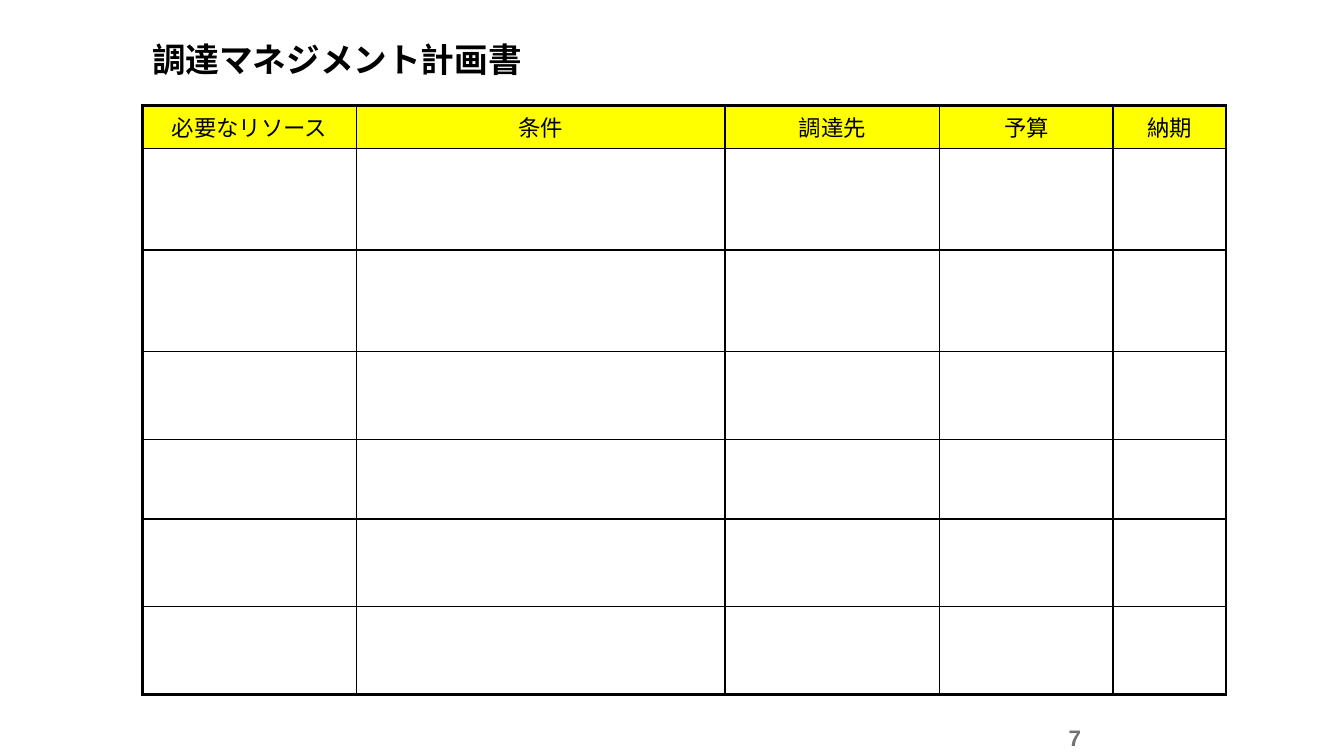
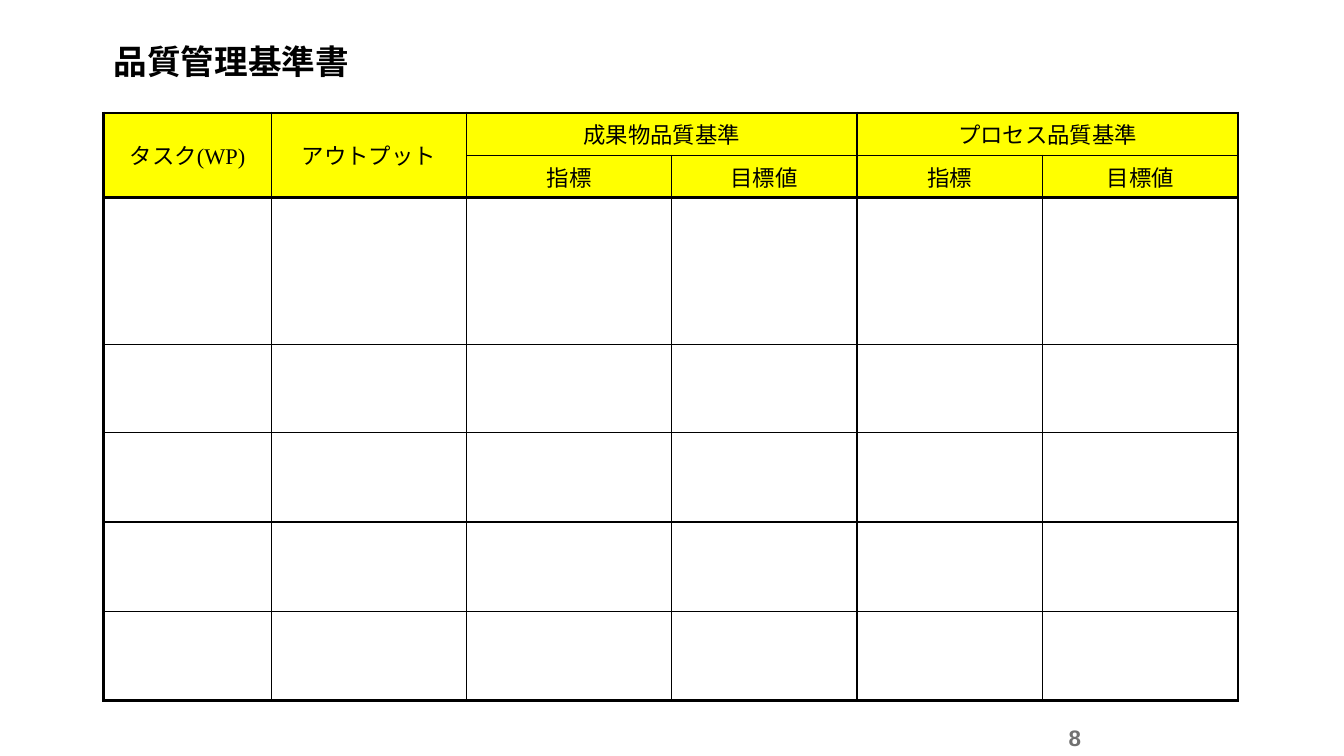
import lxml.etree
import pptx
import pptx.dml.color
import pptx.enum.text
import pptx.oxml.ns
import pptx.util

PX = 9144
COLORS = {"ink": "000000", "header": "FFFF00", "number": "717171"}
GOTHIC = "Noto Sans CJK JP"
ALIGN = pptx.enum.text.PP_ALIGN
ANCHOR = pptx.enum.text.MSO_ANCHOR
THIN, THICK = 1, 2.25

PAGES = [
    {
        "number": "7",
        "title": "調達マネジメント計画書",
        "title_box": (141, 28, 791, 67),
        "table_at": (141, 105),
        "cols": [213, 365, 213, 172, 112],
        "rows": [42, 101, 101, 87, 79, 87, 87],
        "header": [["必要なリソース", "条件", "調達先", "予算", "納期"]],
        "merges": [],
        "thick_rows": {0, 7},
        "font": GOTHIC,
        "anchor": ANCHOR.TOP,
    },
    {
        "number": "8",
        "title": "品質管理基準書",
        "title_box": (103, 26, 776, 75),
        "table_at": (103, 112),
        "cols": [166, 194, 203, 184, 184, 194],
        "rows": [42, 42, 146, 87, 89, 89, 88],
        "header": [
            ["タスク(WP)", "アウトプット", "成果物品質基準", "", "プロセス品質基準", ""],
            ["", "", "指標", "目標値", "指標", "目標値"],
        ],
        "merges": [(0, 0, 1, 0), (0, 1, 1, 1), (0, 2, 0, 3), (0, 4, 0, 5)],
        "thick_rows": {0, 2, 7},
        "font": "Times New Roman",
        "anchor": ANCHOR.MIDDLE,
    },
]


def write(tf, text, size, font, color, align, bold=False):
    p = tf.paragraphs[0]
    p.text = text
    p.alignment = align
    p.font.size = pptx.util.Pt(size)
    p.font.bold = bold
    p.font.color.rgb = pptx.dml.color.RGBColor.from_string(COLORS[color])
    p.font.name = font
    rpr = p.font._element if hasattr(p.font, "_element") else p._p.pPr.find(pptx.oxml.ns.qn("a:defRPr"))
    ea = lxml.etree.SubElement(rpr, pptx.oxml.ns.qn("a:ea"))
    ea.set("typeface", GOTHIC)
    return p


def border(cell, side, width):
    tc_pr = cell._tc.get_or_add_tcPr()
    ln = lxml.etree.SubElement(tc_pr, pptx.oxml.ns.qn("a:ln" + side))
    ln.set("w", str(pptx.util.Pt(width)))
    fill = lxml.etree.SubElement(ln, pptx.oxml.ns.qn("a:solidFill"))
    lxml.etree.SubElement(fill, pptx.oxml.ns.qn("a:srgbClr")).set("val", COLORS["ink"])


prs = pptx.Presentation()
prs.slide_width = 1333 * PX
prs.slide_height = 750 * PX

for page in PAGES:
    s = prs.slides.add_slide(prs.slide_layouts[6])

    tf = s.shapes.add_textbox(*(v * PX for v in page["title_box"])).text_frame
    tf.word_wrap = True
    tf.vertical_anchor = ANCHOR.MIDDLE
    p = write(tf, page["title"], 24, GOTHIC, "ink", ALIGN.LEFT, bold=True)
    p.line_spacing = 0.9

    cols, rows = page["cols"], page["rows"]
    left, top = page["table_at"]
    table = s.shapes.add_table(
        len(rows), len(cols), left * PX, top * PX, sum(cols) * PX, sum(rows) * PX
    ).table
    table.first_row = False
    table.horz_banding = False
    for col, width in zip(table.columns, cols):
        col.width = width * PX
    for row, height in zip(table.rows, rows):
        row.height = height * PX
    for r1, c1, r2, c2 in page["merges"]:
        table.cell(r1, c1).merge(table.cell(r2, c2))

    thick_rows, thick_cols = page["thick_rows"], {0, len(cols)}
    for r in range(len(rows)):
        for c in range(len(cols)):
            cell = table.cell(r, c)
            right, bottom = c + cell.span_width, r + cell.span_height
            border(cell, "L", THICK if c in thick_cols else THIN)
            border(cell, "R", THICK if right in thick_cols else THIN)
            border(cell, "T", THICK if r in thick_rows else THIN)
            border(cell, "B", THICK if bottom in thick_rows else THIN)
            if r >= len(page["header"]):
                cell.fill.background()
                continue
            cell.fill.solid()
            cell.fill.fore_color.rgb = pptx.dml.color.RGBColor.from_string(COLORS["header"])
            cell.vertical_anchor = page["anchor"]
            if not cell.is_spanned:
                write(cell.text_frame, page["header"][r][c], 16, page["font"], "ink", ALIGN.CENTER)

    tf = s.shapes.add_textbox(849 * PX, 705 * PX, 233 * PX, 40 * PX).text_frame
    tf.word_wrap = True
    tf.vertical_anchor = ANCHOR.BOTTOM
    tf.margin_top = tf.margin_bottom = 0
    write(tf, page["number"], 16, "Arial", "number", ALIGN.RIGHT, bold=True)

prs.save("out.pptx")
